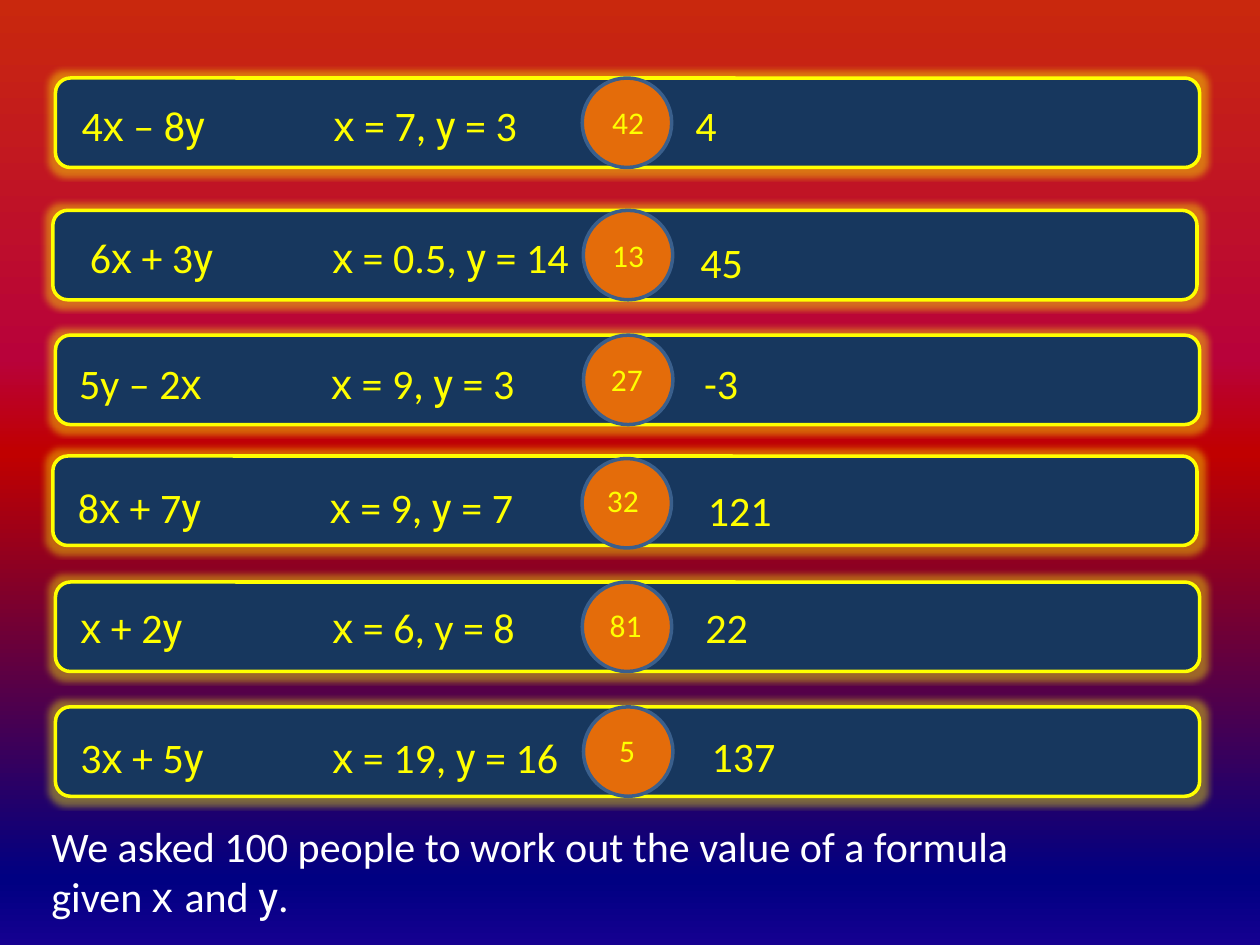
from itertools import groupby
from collections import namedtuple

from lxml import etree
from pptx import Presentation
from pptx.dml.color import RGBColor
from pptx.enum.shapes import MSO_SHAPE
from pptx.enum.text import MSO_AUTO_SIZE
from pptx.oxml.ns import qn
from pptx.util import Pt

BAR = MSO_SHAPE.ROUNDED_RECTANGLE
CIRCLE = MSO_SHAPE.OVAL
GROW = MSO_AUTO_SIZE.SHAPE_TO_FIT_TEXT

COLOURS = {
    "bar": "17375E", "yellow": "FFFF00", "circle": "E46C0A",
    "ring": "3A5F8C", "white": "FFFFFF",
}
SKY = [(0, "C9280D"), (38, "B8023A"), (48, "C00000"), (93, "000082"), (100, "150090")]

# Capital X and Y mark the variables that have a font of their own,
# and an underscore marks a space in the font of X
VARIABLE_FONTS = {"X": "Arial", "_": "Arial", "Y": "Roboto"}
BAR_WIDTH, BAR_HEIGHT = 653.8, 51.1
TAB_WIDTH = 72

# Positions of a row's parts are (left, top) from the corner of its bar
Row = namedtuple("Row", "corner circle formula formula_at formula_width "
                        "count count_at answer answer_at answer_width")
ROWS = [
    Row((31.7, 44.6), (301, 0), "4X – 8Y\t\tX = 7, Y = 3", (7.9, 8.6), 293,
        "42", (311, 10.8), "4", (358.6, 8.6), 74.2),
    Row((30.2, 120.2), (303.1, 0), " 6X + 3Y\tX = 0.5, Y = 14", (8.6, 8.6), 302.4,
        "13", (312.5, 11.2), "45", (362.9, 11.5), 120.2),
    Row((31.7, 191.5), (301.7, 0), "5y – 2X\t\tX = 9, Y = 3", (6.5, 9.4), 285.1,
        "27", (310.3, 10.8), "-3", (363.6, 9.4), 115.2),
    Row((30.2, 260.6), (302.4, 1.4), "8X + 7Y\t\tX = 9, Y = 7", (7.2, 10.8), 281.5,
        "32", (309.6, 10.8), "121", (367.2, 13), 92.9),
    Row((31.7, 332.6), (301, 0), "X + 2Y\t\tX = 6, y = 8", (7.2, 7.4), 266.4,
        "81", (309.6, 10.1), "22", (364.3, 7.4), 56.9),
    Row((31.7, 403.9), (301.7, 0), "3X + 5Y\t\tX = 19, Y = 16", (7.2, 10.8), 290.9,
        " 5", (311, 10.1), "137", (367.9, 10.1), 65.5),
]


def colour(name):
    return RGBColor.from_string(COLOURS[name])


def paint_background(page):
    fill = page.background.fill
    fill.gradient()
    fill.gradient_angle = 270
    stops = next(page.element.iter(qn("a:gsLst")))
    for stop in list(stops):
        stops.remove(stop)
    for percent, value in SKY:
        stop = etree.SubElement(stops, qn("a:gs"), pos=str(percent * 1000))
        etree.SubElement(stop, qn("a:srgbClr"), val=value)


def add_panel(page, kind, left, top, width, height, fill, line):
    panel = page.shapes.add_shape(kind, Pt(left), Pt(top), Pt(width), Pt(height))
    panel.shadow.inherit = False
    panel.fill.solid()
    panel.fill.fore_color.rgb = colour(fill)
    panel.line.color.rgb = colour(line)
    panel.line.width = Pt(2)
    return panel


def add_glow(panel):
    effects = next(panel.element.iter(qn("a:effectLst")))
    glow = etree.SubElement(effects, qn("a:glow"), rad=str(Pt(7)))
    tint = etree.SubElement(glow, qn("a:srgbClr"), val=COLOURS["yellow"])
    etree.SubElement(tint, qn("a:alpha"), val="40000")


def add_text(page, text, left, top, width, height, size=24, ink="yellow"):
    box = page.shapes.add_textbox(Pt(left), Pt(top), Pt(width), Pt(height))
    frame = box.text_frame
    frame.word_wrap = True
    frame.auto_size = GROW
    para = frame.paragraphs[0]
    for font, letters in groupby(text, lambda sign: VARIABLE_FONTS.get(sign, "Calibri")):
        span = para.add_run()
        span.text = "".join(letters)
        if font != "Calibri":
            span.text = span.text.lower().replace("_", " ")
        for name, value in {"name": font, "size": Pt(size)}.items():
            setattr(span.font, name, value)
        span.font.color.rgb = colour(ink)
    # Tab stops one inch apart
    para.level = 0
    layout = next(box.element.iter(qn("a:p"))).get_or_add_pPr()
    layout.set("defTabSz", str(Pt(TAB_WIDTH)))


def add_row(page, row):
    left, top = row.corner

    def place(offset):
        return left + offset[0], top + offset[1]

    # Glowing bar with the circle in its middle
    add_glow(add_panel(page, BAR, left, top, BAR_WIDTH, BAR_HEIGHT, "bar", "yellow"))
    add_panel(page, CIRCLE, *place(row.circle), BAR_HEIGHT, BAR_HEIGHT, "circle", "ring")
    # Formula, number of people and answer
    add_text(page, row.formula, *place(row.formula_at), row.formula_width, 36)
    add_text(page, row.count, *place(row.count_at), 33.8, 28.8, size=18)
    add_text(page, row.answer, *place(row.answer_at), row.answer_width, 36)


def main():
    deck = Presentation()
    deck.slide_width, deck.slide_height = Pt(720), Pt(540)
    page = deck.slides.add_slide(deck.slide_layouts[6])
    paint_background(page)
    for row in ROWS:
        add_row(page, row)
    # Question below the board
    add_text(page, "We asked 100 people to work out the value of a formula given X_and Y.",
             22.3, 465.1, 601.2, 65.5, ink="white")
    deck.save("out.pptx")


if __name__ == "__main__":
    main()
